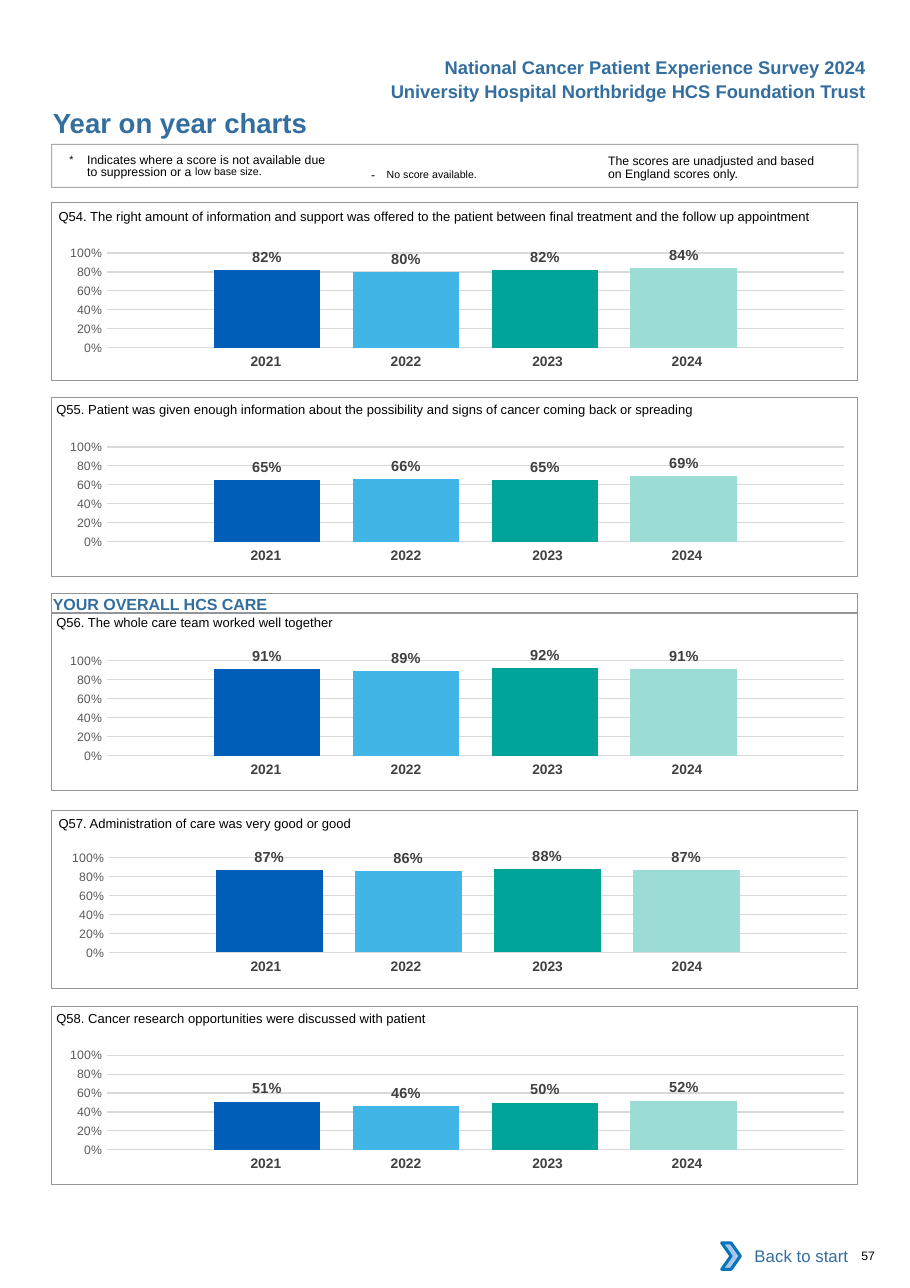
from lxml import etree
from pptx import Presentation
from pptx import util as u
from pptx.chart.data import CategoryChartData
from pptx.dml.color import RGBColor
from pptx.enum import chart as charts, shapes, text
from pptx.oxml import parse_xml
from pptx.oxml.ns import nsdecls, qn

COLOURS = {
    "heading": "336E9F", "text": "000000", "border": "939598", "white": "FFFFFF",
    "year": "414042", "axis": "595959", "grid": "D9D9D9", "label": "404040",
    "chevron": "A8C7E9", "chevron_line": "0A74BB",
}
YEARS = {"2021": "005EB8", "2022": "41B6E6", "2023": "00A499", "2024": "9CDCD7"}
YEAR_COLUMNS = [(3.23, 0), (3.23, 0), (3.4, 0.1), (3.23, 0.3)]
PLOT_LAYOUT = {"x": 0.079, "y": 0.145, "w": 0.915, "h": 0.666}
PANEL_LEFT, PANEL_WIDTH, PANEL_HEIGHT = 1.19, 18.59, 4.11
DEFAULT_INSETS = (0.25, 0.13, 0.25, 0.13)
NO_TABLE_STYLE = "{2D5ABB26-0587-4C30-8999-92F81FD0307C}"
QUESTIONS = [
    ("Q54. The right amount of information and support was offered to the patient between "
     "final treatment and the follow up appointment",
     (1.27, 4.57, 18.08), 0.08, 4.67, (0.99, 5.36), (0.82, 0.8, 0.82, 0.84)),
    ("Q55. Patient was given enough information about the possibility and signs of cancer "
     "coming back or spreading",
     (1.27, 9.02, 18.72), 0.03, 9.17, (0.99, 9.83), (0.65, 0.66, 0.65, 0.69)),
    ("Q56. The whole care team worked well together",
     (1.27, 13.94, 13.41), 0.03, 14.12, (0.99, 14.76), (0.91, 0.89, 0.92, 0.91)),
    ("Q57. Administration of care was very good or good",
     (1.35, 18.57, 18.59), 0, 18.67, (1.04, 19.3), (0.87, 0.86, 0.88, 0.87)),
    ("Q58. Cancer research opportunities were discussed with patient",
     (1.27, 23.06, 11.25), 0.03, 23.19, (0.99, 23.85), (0.51, 0.46, 0.5, 0.52)),
]


def colour(name):
    return RGBColor.from_string(COLOURS[name])


def lengths(box):
    return [u.Cm(value) for value in box]


def format_font(font, size, colour_name, bold=False):
    font.name = "Arial"
    font.size = u.Pt(size)
    font.bold = bold
    font.color.rgb = colour(colour_name)


def set_insets(frame, insets):
    (frame.margin_left, frame.margin_top,
     frame.margin_right, frame.margin_bottom) = lengths(insets)


def set_indents(paragraph, left, first=0, right=0):
    properties = paragraph._p.get_or_add_pPr()
    for name, value in (("marL", left), ("marR", right), ("indent", first)):
        properties.set(name, str(int(u.Cm(value))))


def write_text(shape, content, size, colour_name="text", bold=False, insets=(0, 0, 0, 0),
               left_indent=0, align=text.PP_ALIGN.LEFT, anchor=text.MSO_ANCHOR.TOP, wrap=True):
    frame = shape.text_frame
    frame.word_wrap = wrap
    frame.vertical_anchor = anchor
    set_insets(frame, insets)
    paragraph = frame.paragraphs[0]
    paragraph.text = content
    paragraph.alignment = align
    format_font(paragraph.font, size, colour_name, bold)
    set_indents(paragraph, left_indent)
    return paragraph


def add_text(slide, box, content, size, **options):
    return write_text(slide.shapes.add_textbox(*lengths(box)), content, size, **options)


def add_raised_run(paragraph, content, baseline):
    run = paragraph.add_run()
    run.text = content
    run.font.size = u.Pt(12)
    run._r.get_or_add_rPr().set("baseline", str(baseline * 1000))


def add_plain_run(paragraph, content):
    run = paragraph.add_run()
    run.text = content
    return run


def add_box(slide, box, fill=None, line="border", width=0.5, kind=shapes.MSO_SHAPE.RECTANGLE):
    shape = slide.shapes.add_shape(kind, *lengths(box))
    shape.shadow.inherit = False
    if fill:
        shape.fill.solid()
        shape.fill.fore_color.rgb = colour(fill)
    else:
        shape.fill.background()
    if line:
        shape.line.color.rgb = colour(line)
        shape.line.width = u.Pt(width)
    else:
        shape.line.fill.background()
    return shape


def add_years(slide, top):
    width = sum(column for column, inset in YEAR_COLUMNS)
    table = slide.shapes.add_table(1, len(YEARS), *lengths((4.39, top, width, 0.69))).table
    table.first_row = table.horz_banding = False
    table._tbl.tblPr.find(qn("a:tableStyleId")).text = NO_TABLE_STYLE
    for column, cell, year, (width, inset) in zip(
            table.columns, table.rows[0].cells, YEARS, YEAR_COLUMNS):
        column.width = u.Cm(width)
        cell.fill.background()
        set_insets(cell, (0.25, 0.13, inset, 0.13))
        paragraph = cell.text_frame.paragraphs[0]
        paragraph.text = year
        paragraph.alignment = text.PP_ALIGN.CENTER
        format_font(paragraph.font, 9, "year", bold=True)


def set_plot_layout(chart):
    plot_area = chart._chartSpace.chart.plotArea
    for layout in plot_area.findall(qn("c:layout")):
        plot_area.remove(layout)
    modes = "".join(f'<c:{side}Mode val="edge"/>' for side in "xy")
    sizes = "".join(f'<c:{side} val="{value}"/>' for side, value in PLOT_LAYOUT.items())
    plot_area.insert(0, parse_xml(
        f'<c:layout {nsdecls("c")}><c:manualLayout><c:layoutTarget val="inner"/>'
        f'{modes}{sizes}</c:manualLayout></c:layout>'))


def add_scores(slide, left, top, scores):
    data = CategoryChartData(number_format="0%")
    data.categories = ["1"]
    for number, score in enumerate(scores, 1):
        data.add_series(f"Series {number}", [score])
    chart = slide.shapes.add_chart(charts.XL_CHART_TYPE.COLUMN_CLUSTERED,
                                   *lengths((left, top, PANEL_WIDTH, 3.28)), data).chart
    chart.has_legend = chart.has_title = False
    chart.font.name = "Calibri"
    chart.font.size = u.Pt(10)
    chart.font.color.rgb = colour("text")
    chart.category_axis.visible = False
    axis = chart.value_axis
    axis.minimum_scale, axis.maximum_scale, axis.major_unit = 0, 1, 0.2
    axis.major_tick_mark = axis.minor_tick_mark = charts.XL_TICK_MARK.NONE
    axis.format.line.fill.background()
    axis.major_gridlines.format.line.color.rgb = colour("grid")
    axis.major_gridlines.format.line.width = u.Pt(0.75)
    axis.tick_labels.number_format = "0%"
    axis.tick_labels.number_format_is_linked = False
    format_font(axis.tick_labels.font, 8, "axis")
    plot = chart.plots[0]
    plot.gap_width, plot.overlap, plot.vary_by_categories = 200, -30, False
    for series, fill in zip(plot.series, YEARS.values()):
        series.format.fill.solid()
        series.format.fill.fore_color.rgb = RGBColor.from_string(fill)
        labels = series.data_labels
        labels.show_value = True
        labels.position = charts.XL_LABEL_POSITION.OUTSIDE_END
        labels.number_format = "0%"
        labels.number_format_is_linked = False
        format_font(labels.font, 9.5, "label", bold=True)
    set_plot_layout(chart)


def add_question(slide, question, question_place, indent, panel_top, chart_place, scores):
    left, top = chart_place
    add_years(slide, top + 2.67)
    add_scores(slide, left, top, scores)
    add_text(slide, (*question_place, 0.61), question, 8.5,
             insets=(0, 0.23, 0, 0), left_indent=indent)
    add_box(slide, (PANEL_LEFT, panel_top, PANEL_WIDTH, PANEL_HEIGHT))


def add_notes_panel(slide):
    unadjusted = add_text(slide, (14.02, 3.51, 5.11, 0.69),
                          "The scores are unadjusted and based on England scores only.", 8,
                          insets=(0, 0.08, 0, 0))
    missing = add_text(slide, (8.31, 3.58, 4.65, 0.61), "", 8, insets=DEFAULT_INSETS)
    add_plain_run(missing, "- ")._r.get_or_add_rPr().set("spc", "260")
    add_raised_run(missing, "No score available.", 3)
    suppressed = add_text(slide, (1.6, 3.51, 6.91, 0.33), "", 8, insets=(0, 0.08, 0, 0))
    add_raised_run(suppressed, "*\t", 3)
    add_plain_run(suppressed, "Indicates where a score is not available due to suppression or a ")
    add_raised_run(suppressed, "low base size.", 7)
    set_indents(suppressed, 0.41, -0.41, 0.89)
    unadjusted.line_spacing = suppressed.line_spacing = u.Pt(8.1)
    panel = add_box(slide, (PANEL_LEFT, 3.33, PANEL_WIDTH, 0.99), width=0.75)
    for line_colour in panel._element.spPr.iter(qn("a:srgbClr")):
        etree.SubElement(line_colour, qn("a:alpha")).set("val", "80000")


def main():
    presentation = Presentation()
    presentation.slide_width, presentation.slide_height = lengths((20.98, 29.69))
    slide = presentation.slides.add_slide(presentation.slide_layouts[5])
    title = slide.shapes.title
    title.left, title.top, title.width, title.height = lengths((1.19, 2.44, 11.43, 0.76))
    write_text(title, "Year on year charts", 18, "heading", bold=True, left_indent=0.03)
    for box, heading in (
            ((9.96, 1.17, 10.26, 0.76), "National Cancer Patient Experience Survey 2024"),
            ((8.28, 1.73, 11.94, 0.76), "University Hospital Northbridge HCS Foundation Trust")):
        add_text(slide, box, heading, 12, colour_name="heading", bold=True,
                 insets=DEFAULT_INSETS, align=text.PP_ALIGN.RIGHT, wrap=False)
    add_notes_panel(slide)
    for question in QUESTIONS:
        add_question(slide, *question)
    section = add_box(slide, (PANEL_LEFT, 13.67, PANEL_WIDTH, 0.46))
    write_text(section, "YOUR OVERALL HCS CARE", 10.5, "heading", bold=True,
               insets=(0, 0.03, 0, 0), left_indent=0.03)
    back = add_box(slide, (16.81, 28.42, 3, 1.07), fill="white", line=None)
    write_text(back, "Back to start", 11, "heading", insets=DEFAULT_INSETS,
               align=text.PP_ALIGN.RIGHT, anchor=text.MSO_ANCHOR.MIDDLE)
    add_box(slide, (16.64, 28.65, 0.43, 0.61), fill="chevron", line="chevron_line", width=2,
            kind=shapes.MSO_SHAPE.CHEVRON)
    add_text(slide, (19.61, 28.78, 1.3, 0.33), "57", 8, left_indent=0.25)
    presentation.save("out.pptx")


if __name__ == "__main__":
    main()
